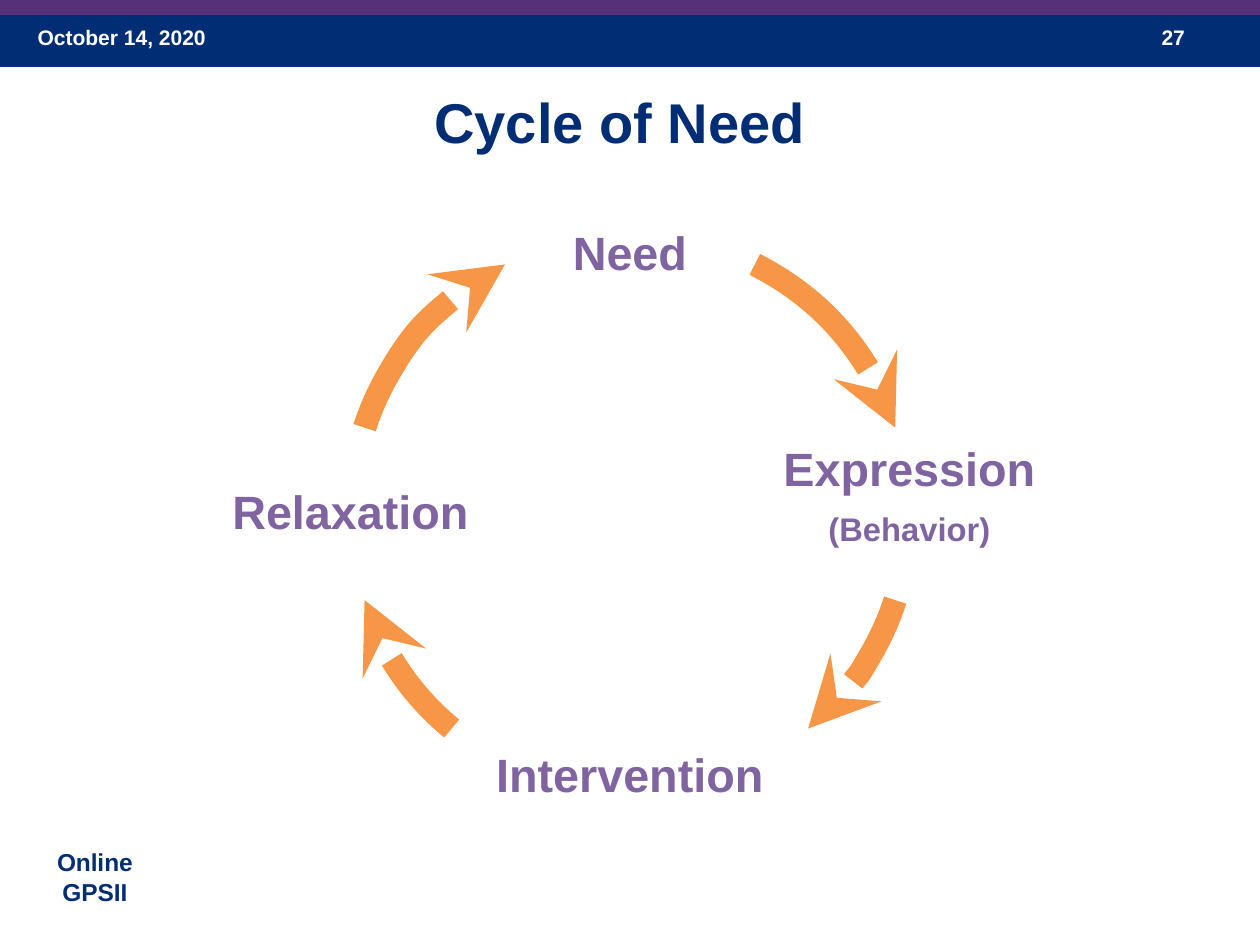
from lxml.etree import SubElement
from pptx import Presentation
from pptx.dml.color import RGBColor
from pptx.enum.shapes import MSO_SHAPE as Shape
from pptx.enum.text import MSO_ANCHOR as Anchor, PP_ALIGN as Align
from pptx.oxml.ns import qn
from pptx.util import Emu, Pt

NAVY = RGBColor(0x00, 0x2D, 0x73)
PLUM = RGBColor(0x55, 0x32, 0x78)
LILAC = RGBColor(0x80, 0x64, 0xA2)
ORANGE = RGBColor(0xF7, 0x96, 0x46)
WHITE = RGBColor(0xFF, 0xFF, 0xFF)

# Ring shared by the four arrows
RING = (351, 235, 558, 558)
ARCS = [(296.6, 342), (18, 50.3), (129.7, 162), (198, 243.4)]

# Stage: lines with sizes, box, lift of the text above the box middle
STAGES = [
    ([("Need", 20)], (516, 160, 228, 153), -15),
    ([("Expression", 20), ("(Behavior)", 14)], (760, 438, 299, 153), 17),
    ([("Intervention", 20)], (460, 717, 340, 153), 20),
    ([("Relaxation", 20)], (201, 438, 299, 153), 4),
]


def px(n):
    return Emu(round(n * 914400 / 168))


def add_bar(slide, box, color):
    bar = slide.shapes.add_shape(Shape.RECTANGLE, *map(px, box))
    bar.shadow.inherit = False
    bar.fill.solid()
    bar.fill.fore_color.rgb = color
    bar.line.fill.background()


def add_text(slide, lines, box, color, align=Align.CENTER, gap=0,
             pads=(8, 8), anchor=Anchor.TOP, space=None):
    frame = slide.shapes.add_textbox(*map(px, box)).text_frame
    frame.word_wrap = True
    frame.vertical_anchor = anchor
    frame.margin_top, frame.margin_bottom = map(px, pads)
    frame.text = "\n".join(text for text, size in lines)
    for i, (para, (text, size)) in enumerate(zip(frame.paragraphs, lines)):
        para.alignment = align
        para.line_spacing = space
        if i:
            para.space_before = Pt(gap)
        font = para.font
        font.name, font.size, font.bold = "Arial", Pt(size), True
        font.color.rgb = color


def add_stage(slide, lines, box, lift):
    pads = (max(0, -2 * lift), max(0, 2 * lift))
    space = 0.9 if len(lines) > 1 else None
    add_text(slide, lines, box, LILAC, gap=7, pads=pads,
             anchor=Anchor.MIDDLE, space=space)


def add_arc(slide, start, end):
    arc = slide.shapes.add_shape(Shape.ARC, *map(px, RING))
    arc.shadow.inherit = False
    # Adjustments count 60000 units a degree, divided by 100000
    arc.adjustments[0] = start * 0.6
    arc.adjustments[1] = end * 0.6
    arc.fill.background()
    arc.line.color.rgb = ORANGE
    arc.line.width = Pt(10)
    line = arc.element.spPr.find(qn("a:ln"))
    SubElement(line, qn("a:tailEnd"), type="stealth")


def main():
    deck = Presentation()
    deck.slide_width, deck.slide_height = px(1260), px(945)
    slide = deck.slides.add_slide(deck.slide_layouts[6])

    # Header
    add_bar(slide, (0, 12, 1260, 55), NAVY)
    add_text(slide, [("October 14, 2020", 9)], (21, 17, 294, 50), WHITE,
             Align.LEFT)
    add_text(slide, [("27", 9)], (1145, 17, 94, 50), WHITE, Align.LEFT)
    add_bar(slide, (0, 0, 1260, 15), PLUM)

    # Footer and title
    add_text(slide, [("Online", 10.5), ("GPSII", 10.5)],
             (36, 839, 118, 67), NAVY, gap=0.4)
    add_text(slide, [("Cycle of Need", 24)], (21, 80, 1197, 118), NAVY)

    # Cycle
    for stage, arc in zip(STAGES, ARCS):
        add_stage(slide, *stage)
        add_arc(slide, *arc)

    deck.save("out.pptx")


if __name__ == "__main__":
    main()
